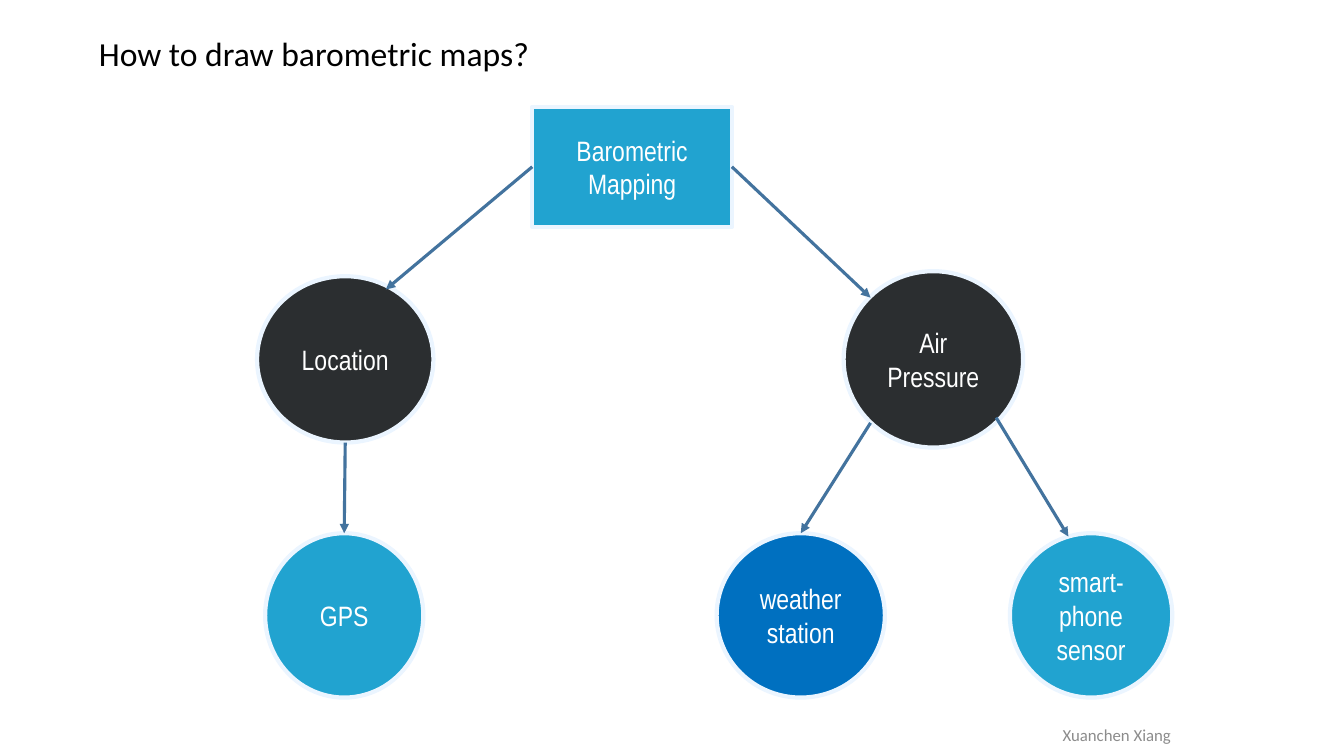
from collections import namedtuple
from dataclasses import dataclass

from lxml import etree
from pptx import Presentation
from pptx.dml.color import RGBColor
from pptx.enum import shapes, text
from pptx.oxml import ns
from pptx.util import Pt

Box = namedtuple("Box", "left top width height")


@dataclass(frozen=True)
class Theme:
    light_blue: str = "21A3D0"
    blue: str = "0070C0"
    charcoal: str = "2B2E30"
    outline: str = "EBF5FF"
    arrow: str = "43739E"
    white: str = "FFFFFF"
    black: str = "000000"
    gray: str = "8C8C8C"
    node_font: str = "Arial Narrow"
    text_font: str = "Calibri"
    title_size: float = 24
    node_size: float = 20
    footer_size: float = 12
    outline_width: float = 3
    arrow_width: float = 2.25


THEME = Theme()
CENTER = text.PP_ALIGN.CENTER
MIDDLE = text.MSO_ANCHOR.MIDDLE
ELLIPSE = shapes.MSO_SHAPE.OVAL
RECTANGLE = shapes.MSO_SHAPE.RECTANGLE

NODES = {
    "gps": (ELLIPSE, Box(5.8, 304.6, 113, 117.4), THEME.light_blue, ["GPS"]),
    "phone": (ELLIPSE, Box(537.8, 304.6, 116, 117.4), THEME.light_blue, ["smart-phone", "sensor"]),
    "weather": (ELLIPSE, Box(328.3, 304.6, 120.2, 117.4), THEME.blue, ["weather", "station"]),
    "pressure": (ELLIPSE, Box(419, 117.4, 128.2, 126), THEME.charcoal, ["Air", "Pressure"]),
    "location": (ELLIPSE, Box(0, 121, 126, 118.8), THEME.charcoal, ["Location"]),
    "mapping": (RECTANGLE, Box(196.6, 0, 142.6, 85.7), THEME.light_blue, ["Barometric", "Mapping"]),
}

ARROWS = [
    ("mapping", (0, 0.5), "location", (0.73, 0.08)),
    ("location", (0.5, 1), "gps", (0.5, 0)),
    ("pressure", (0.15, 0.86), "weather", (0.5, 0)),
    ("pressure", (0.85, 0.83), "phone", (0.36, 0.02)),
    ("mapping", (1, 0.5), "pressure", (0.15, 0.15)),
]


def place(shape, box):
    shape.left, shape.top, shape.width, shape.height = map(Pt, box)


def write_text(frame, lines, *, font, size, color, align, anchor):
    frame.word_wrap = True
    frame.auto_size = text.MSO_AUTO_SIZE.NONE
    frame.vertical_anchor = anchor
    for index, line in enumerate(lines):
        paragraph = frame.add_paragraph() if index else frame.paragraphs[0]
        paragraph.alignment = align
        run = paragraph.add_run()
        run.text = line
        run.font.name = font
        run.font.size = Pt(size)
        run.font.color.rgb = RGBColor.from_string(color)


def add_title(slide, box):
    title = slide.shapes.title
    place(title, box)
    write_text(title.text_frame, ["How to draw barometric maps?"], font=THEME.text_font,
               size=THEME.title_size, color=THEME.black,
               align=text.PP_ALIGN.LEFT, anchor=text.MSO_ANCHOR.TOP)


def add_node(slide, kind, box, fill, lines):
    shape = slide.shapes.add_shape(kind, *map(Pt, box))
    shape.shadow.inherit = False
    shape.fill.solid()
    shape.fill.fore_color.rgb = RGBColor.from_string(fill)
    shape.line.color.rgb = RGBColor.from_string(THEME.outline)
    shape.line.width = Pt(THEME.outline_width)
    write_text(shape.text_frame, lines, font=THEME.node_font, size=THEME.node_size,
               color=THEME.white, align=CENTER, anchor=MIDDLE)


def add_arrow(slide, start, end):
    connector = slide.shapes.add_connector(
        shapes.MSO_CONNECTOR.STRAIGHT, *map(Pt, (*start, *end)))
    connector.line.color.rgb = RGBColor.from_string(THEME.arrow)
    connector.line.width = Pt(THEME.arrow_width)
    etree.SubElement(connector.line._get_or_add_ln(), ns.qn("a:tailEnd"), type="triangle")
    etree.SubElement(connector._element.spPr, ns.qn("a:effectLst"))


def anchor_point(box, fraction):
    return box.left + box.width * fraction[0], box.top + box.height * fraction[1]


def add_diagram(slide, box):
    placed = {}
    for name, (kind, node, fill, lines) in NODES.items():
        placed[name] = node._replace(left=box.left + node.left, top=box.top + node.top)
        add_node(slide, kind, placed[name], fill, lines)
    for source, leaving, target, arriving in ARROWS:
        add_arrow(slide, anchor_point(placed[source], leaving),
                  anchor_point(placed[target], arriving))


def add_footer(slide, box):
    footer = slide.shapes.add_textbox(*map(Pt, box))
    write_text(footer.text_frame, ["Xuanchen Xiang"], font=THEME.text_font,
               size=THEME.footer_size, color=THEME.gray, align=CENTER, anchor=MIDDLE)


def main():
    presentation = Presentation()
    presentation.slide_width = Pt(960)
    presentation.slide_height = Pt(540)
    slide = presentation.slides.add_slide(presentation.slide_layouts.get_by_name("Title Only"))
    add_title(slide, Box(63.4, 20.2, 367.2, 36))
    add_diagram(slide, Box(183.6, 76.3, 653.8, 422))
    add_footer(slide, Box(635.8, 510.5, 324, 28.8))
    presentation.save("out.pptx")


if __name__ == "__main__":
    main()
